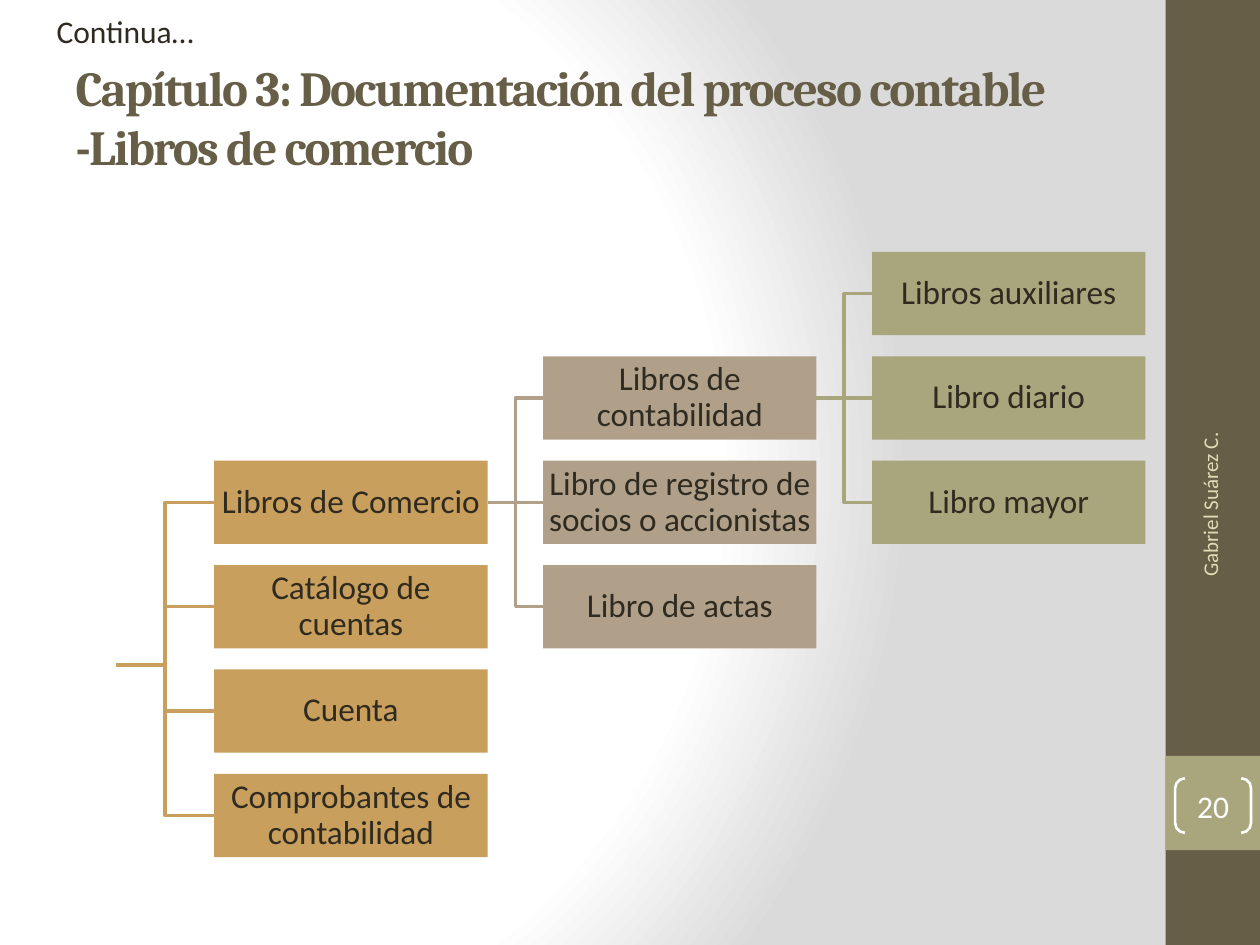
from dataclasses import dataclass

from lxml import etree
from pptx import Presentation
from pptx.dml.color import RGBColor
from pptx.enum.shapes import MSO_CONNECTOR, MSO_SHAPE
from pptx.enum.text import MSO_ANCHOR, MSO_AUTO_SIZE, PP_ALIGN
from pptx.oxml import parse_xml
from pptx.oxml.ns import nsdecls, qn
from pptx.util import Cm, Pt

RECT, BRACKETS = MSO_SHAPE.RECTANGLE, MSO_SHAPE.DOUBLE_BRACKET
ELBOW, STRAIGHT = MSO_CONNECTOR.ELBOW, MSO_CONNECTOR.STRAIGHT
LEFT, CENTER, RIGHT = PP_ALIGN.LEFT, PP_ALIGN.CENTER, PP_ALIGN.RIGHT
TOP, MIDDLE = MSO_ANCHOR.TOP, MSO_ANCHOR.MIDDLE
LEFT_SIDE, RIGHT_SIDE = 1, 3
TITLE_ONLY = 5


@dataclass(frozen=True)
class Theme:
    olive: str = "675E47"
    sage: str = "A9A57C"
    ochre: str = "C89F5D"
    taupe: str = "B1A089"
    ink: str = "2F2B20"
    cream: str = "DFDCB7"
    white: str = "FFFFFF"
    grey: str = "DADADA"
    body_font: str = "Calibri"
    title_font: str = "Cambria"
    title_size: float = 28
    box_size: float = 19
    note_size: float = 18
    author_size: float = 12
    branch_width: float = 2
    bracket_width: float = 1.5


THEME = Theme()

# Levels of the tree: colour, and (row, label) for each book
LEVELS = [
    (THEME.ochre, [(2, "Libros de Comercio"), (3, "Catálogo de cuentas"),
                   (4, "Cuenta"), (5, "Comprobantes de contabilidad")]),
    (THEME.taupe, [(1, "Libros de contabilidad"),
                   (2, "Libro de registro de socios o accionistas"),
                   (3, "Libro de actas")]),
    (THEME.sage, [(0, "Libros auxiliares"), (1, "Libro diario"),
                  (2, "Libro mayor")]),
]


def rgb(value):
    return RGBColor.from_string(value)


def write(shape, text, size, color, align=LEFT, anchor=MIDDLE,
          font=THEME.body_font, inset=None):
    frame = shape.text_frame
    frame.word_wrap = True
    frame.auto_size = MSO_AUTO_SIZE.NONE
    frame.vertical_anchor = anchor
    if inset is not None:
        frame.margin_left = frame.margin_right = inset
        frame.margin_top = frame.margin_bottom = inset
    paragraph = frame.paragraphs[0]
    paragraph.alignment = align
    run = paragraph.add_run()
    run.text = text
    run.font.size = Pt(size)
    run.font.name = font
    run.font.color.rgb = rgb(color)
    return run


def add_block(slide, box, color):
    block = slide.shapes.add_shape(RECT, *box)
    block.shadow.inherit = False
    block.fill.solid()
    block.fill.fore_color.rgb = rgb(color)
    block.line.fill.background()
    return block


def add_branch(slide, start, end, color):
    kind = STRAIGHT if start[1] == end[1] else ELBOW
    branch = slide.shapes.add_connector(kind, *start, *end)
    branch.line.color.rgb = rgb(color)
    branch.line.width = Pt(THEME.branch_width)
    etree.SubElement(branch._element.spPr, qn("a:effectLst"))
    return branch


def paint_background(slide):
    """Circular gradient, white on the left and grey on the right."""
    slide.background.fill.gradient()
    linear = next(slide.element.iter(qn("a:gradFill")))
    stops = [(0, THEME.white), (75, THEME.white), (100, THEME.grey)]
    stop_xml = "".join(
        f'<a:gs pos="{pos * 1000}"><a:srgbClr val="{color}"/></a:gs>'
        for pos, color in stops)
    circular = parse_xml(
        f'<a:gradFill {nsdecls("a")} rotWithShape="1"><a:gsLst>{stop_xml}'
        '</a:gsLst><a:path path="circle"><a:fillToRect l="20000" t="50000" '
        'r="100000" b="50000"/></a:path></a:gradFill>')
    linear.getparent().replace(linear, circular)


def add_sidebar(slide, left, top, width, height):
    add_block(slide, (left, top, width, height), THEME.olive)
    number_top = top + Cm(15.24)
    add_block(slide, (left, number_top, width, width), THEME.sage)

    # Author, reading upwards along the bar
    author_width, author_height = Cm(6.58), Cm(1.02)
    author = slide.shapes.add_textbox(
        left + (width - author_width) // 2 - Cm(0.06), top + Cm(11.25),
        author_width, author_height)
    author.rotation = 270
    write(author, "Gabriel Suárez C.", THEME.author_size, THEME.cream, RIGHT)

    # Page number in brackets
    brackets = slide.shapes.add_shape(
        BRACKETS, left + Cm(0.19), number_top + Cm(0.45), Cm(1.53), Cm(1.1))
    brackets.adjustments[0] = 0.18
    brackets.shadow.inherit = False
    brackets.fill.background()
    brackets.line.color.rgb = rgb(THEME.white)
    brackets.line.width = Pt(THEME.bracket_width)
    write(brackets, "20", THEME.note_size, THEME.white, CENTER, inset=0)


def add_heading(slide, left, top, width, height):
    title = slide.shapes.title
    title.left, title.top = left, top
    title.width, title.height = width, height
    run = write(title,
                "Capítulo 3: Documentación del proceso contable "
                "-Libros de comercio",
                THEME.title_size, THEME.olive, font=THEME.title_font)
    run.font.bold = True
    run.font._element.set("spc", "-100")

    note = slide.shapes.add_textbox(
        left - Cm(0.38), top - Cm(0.64), Cm(3.81), Cm(1.02))
    write(note, "Continua…", THEME.note_size, THEME.ink, anchor=TOP)


def add_book_tree(slide, left, top, width, height):
    """Each level hangs from the first book of the level before it."""
    stem = Cm(1.98)
    box_width, box_height = Cm(5.51), Cm(1.68)
    column_step = (width - stem - box_width) // (len(LEVELS) - 1)
    row_step = (height - box_height) // 5
    root = (left, top + Cm(8.33))
    parent = None

    for column, (color, books) in enumerate(LEVELS):
        boxes = []
        for row, label in books:
            box = add_block(slide, (left + stem + column * column_step,
                                    top + row * row_step,
                                    box_width, box_height), color)
            run_box = write(box, label, THEME.box_size, THEME.ink, CENTER,
                            inset=Cm(0.03))
            run_box.font.bold = False
            box.text_frame.paragraphs[0].line_spacing = 0.9
            boxes.append(box)

        start = root if parent is None else (
            parent.left + parent.width, parent.top + parent.height // 2)
        for box in boxes:
            end = (box.left, box.top + box.height // 2)
            branch = add_branch(slide, start, end, color)
            if parent is not None:
                branch.begin_connect(parent, RIGHT_SIDE)
            branch.end_connect(box, LEFT_SIDE)
        parent = boxes[0]


def main():
    deck = Presentation()
    deck.slide_width, deck.slide_height = Cm(25.4), Cm(19.05)
    slide = deck.slides.add_slide(deck.slide_layouts[TITLE_ONLY])
    paint_background(slide)
    add_sidebar(slide, Cm(23.5), 0, Cm(1.9), deck.slide_height)
    add_book_tree(slide, Cm(2.34), Cm(5.08), Cm(20.75), Cm(12.2))
    add_heading(slide, Cm(1.27), Cm(0.76), Cm(21.16), Cm(3.18))
    deck.save("out.pptx")


if __name__ == "__main__":
    main()
